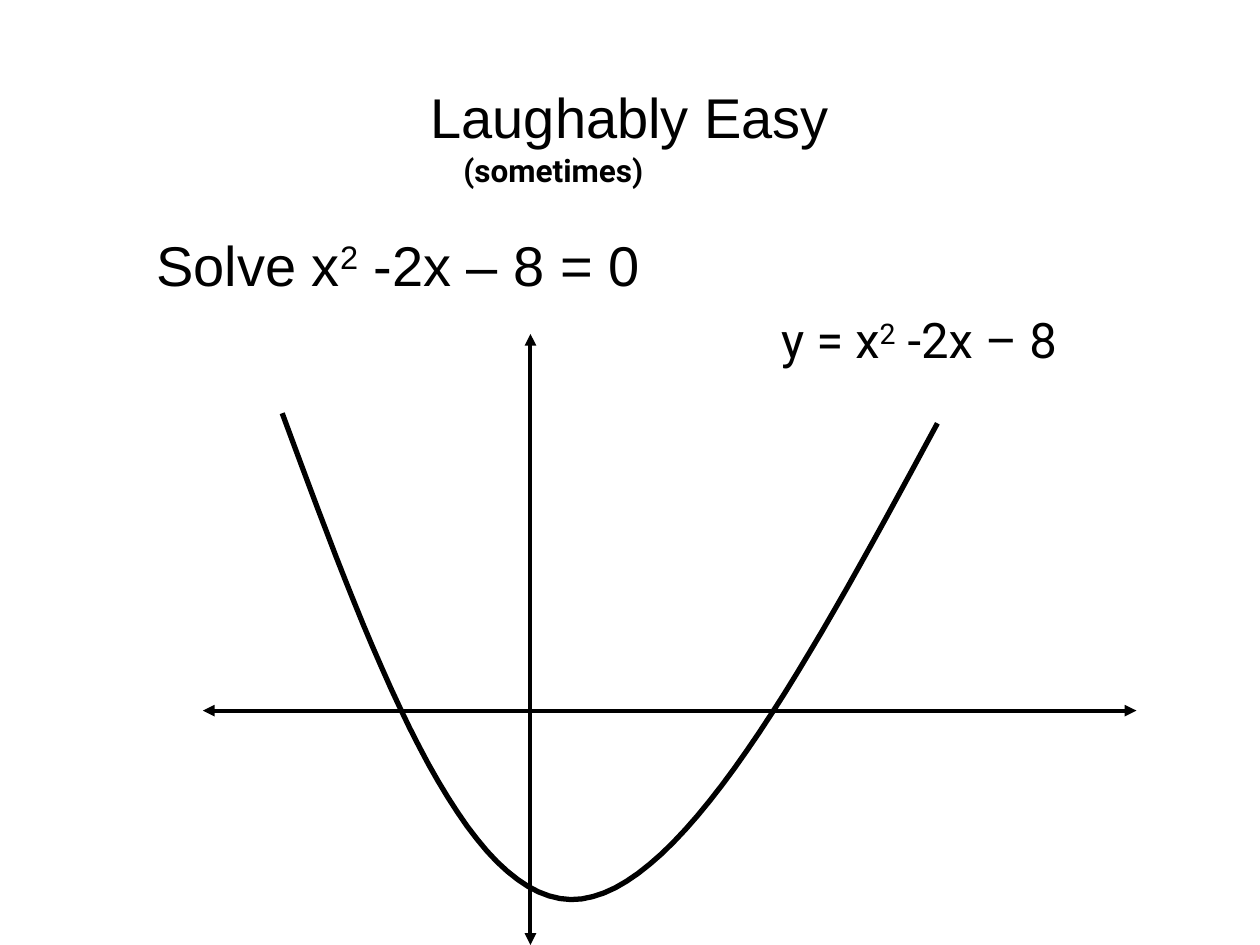
from dataclasses import dataclass

from lxml.etree import SubElement
from pptx import Presentation
from pptx.dml.color import RGBColor
from pptx.enum.shapes import MSO_CONNECTOR
from pptx.enum.text import MSO_ANCHOR, PP_ALIGN
from pptx.oxml.ns import qn
from pptx.util import Inches, Pt


@dataclass(frozen=True)
class Theme:
    ink: RGBColor = RGBColor(0, 0, 0)
    paper: RGBColor = RGBColor(255, 255, 255)
    heading_font: str = "Arial"
    label_font: str = "Roboto"
    heading_size: int = 32
    equation_size: int = 28
    remark_size: int = 18
    axis_width: float = 2.25
    curve_width: float = 3


THEME = Theme()
CURVE_STEPS = 30


def place(shape, box):
    shape.left, shape.top, shape.width, shape.height = map(Inches, box)


def write(para, parts, font_name, size, bold=False):
    para.font.name = font_name
    para.font.size = Pt(size)
    para.font.bold = bold
    para.font.color.rgb = THEME.ink
    for index, part in enumerate(parts):
        span = para.add_run()
        span.text = part
        if index % 2:
            span._r.get_or_add_rPr().set("baseline", "30000")


def add_title(page, box):
    title = page.shapes.title
    place(title, box)
    title.text_frame.vertical_anchor = MSO_ANCHOR.MIDDLE
    para = title.text_frame.paragraphs[0]
    para.alignment = PP_ALIGN.CENTER
    write(para, ["Laughably Easy"], THEME.heading_font, THEME.heading_size)


def add_problem(page, box):
    body = page.placeholders[1]
    place(body, box)
    para = body.text_frame.paragraphs[0]
    properties = para._p.get_or_add_pPr()
    properties.set("marL", str(Inches(0.38)))
    properties.set("indent", str(Inches(-0.38)))
    SubElement(properties, qn("a:buNone"))
    para.space_before = Pt(0)
    write(para, ["Solve x", "2", " -2x – 8 = 0"], THEME.heading_font, THEME.heading_size)


def add_label(page, box, parts, size, bold=False):
    label = page.shapes.add_textbox(*map(Inches, box))
    label.text_frame.word_wrap = True
    write(label.text_frame.paragraphs[0], parts, THEME.label_font, size, bold)


def add_axis(page, start, end):
    axis = page.shapes.add_connector(MSO_CONNECTOR.STRAIGHT, *map(Inches, start + end))
    axis.line.color.rgb = THEME.ink
    axis.line.width = Pt(THEME.axis_width)
    outline = axis.line._get_or_add_ln()
    for arrowhead in ("a:headEnd", "a:tailEnd"):
        SubElement(outline, qn(arrowhead), type="triangle")
    SubElement(axis._element.spPr, qn("a:effectLst"))


def bezier_point(controls, t):
    weights = ((1 - t) ** 3, 3 * t * (1 - t) ** 2, 3 * t**2 * (1 - t), t**3)
    return tuple(sum(w * p[axis] for w, p in zip(weights, controls)) for axis in (0, 1))


def add_parabola(page, box):
    left, top, width, height = box
    start, vertex, end = (0, 0), (2.29, 3.86), (width, 0.08)
    halves = (
        (start, (0.71, 1.92), (1.42, 3.84), vertex),
        (vertex, (3.15, height), (4.18, 1.97), end),
    )
    points = [
        bezier_point(half, step / CURVE_STEPS)
        for half in halves
        for step in range(1, CURVE_STEPS + 1)
    ]
    builder = page.shapes.build_freeform(0, 0, scale=Inches(1) / 1000)
    builder = page.shapes.build_freeform(
        round(start[0] * 1000), round(start[1] * 1000), scale=Inches(1) / 1000
    )
    builder.add_line_segments([(round(x * 1000), round(y * 1000)) for x, y in points], close=False)
    curve = builder.convert_to_shape(Inches(left), Inches(top))
    curve.shadow.inherit = False
    curve.fill.background()
    curve.line.color.rgb = THEME.ink
    curve.line.width = Pt(THEME.curve_width)


def add_graph(page, box):
    left, top, width, height = box
    axis_x, axis_y = left + 2.6, top + 2.99
    add_axis(page, (left, axis_y), (left + width, axis_y))
    add_axis(page, (axis_x, top + height), (axis_x, top))
    add_parabola(page, (left + 0.63, top + 0.63, 5.2, 3.87))


def main():
    deck = Presentation()
    deck.slide_width, deck.slide_height = Inches(10), Inches(7.5)
    page = deck.slides.add_slide(deck.slide_layouts[1])
    page.background.fill.solid()
    page.background.fill.fore_color.rgb = THEME.paper
    add_title(page, (0.5, 0.3, 9, 1.25))
    add_problem(page, (1.14, 1.78, 8.35, 5.43))
    add_graph(page, (1.61, 2.65, 7.41, 4.85))
    add_label(page, (3.58, 1.15, 3.54, 0.63), ["(sometimes)"], THEME.remark_size, True)
    add_label(page, (6.1, 2.41, 3.78, 0.57), ["y = x", "2", " -2x – 8"], THEME.equation_size)
    deck.save("out.pptx")


if __name__ == "__main__":
    main()
